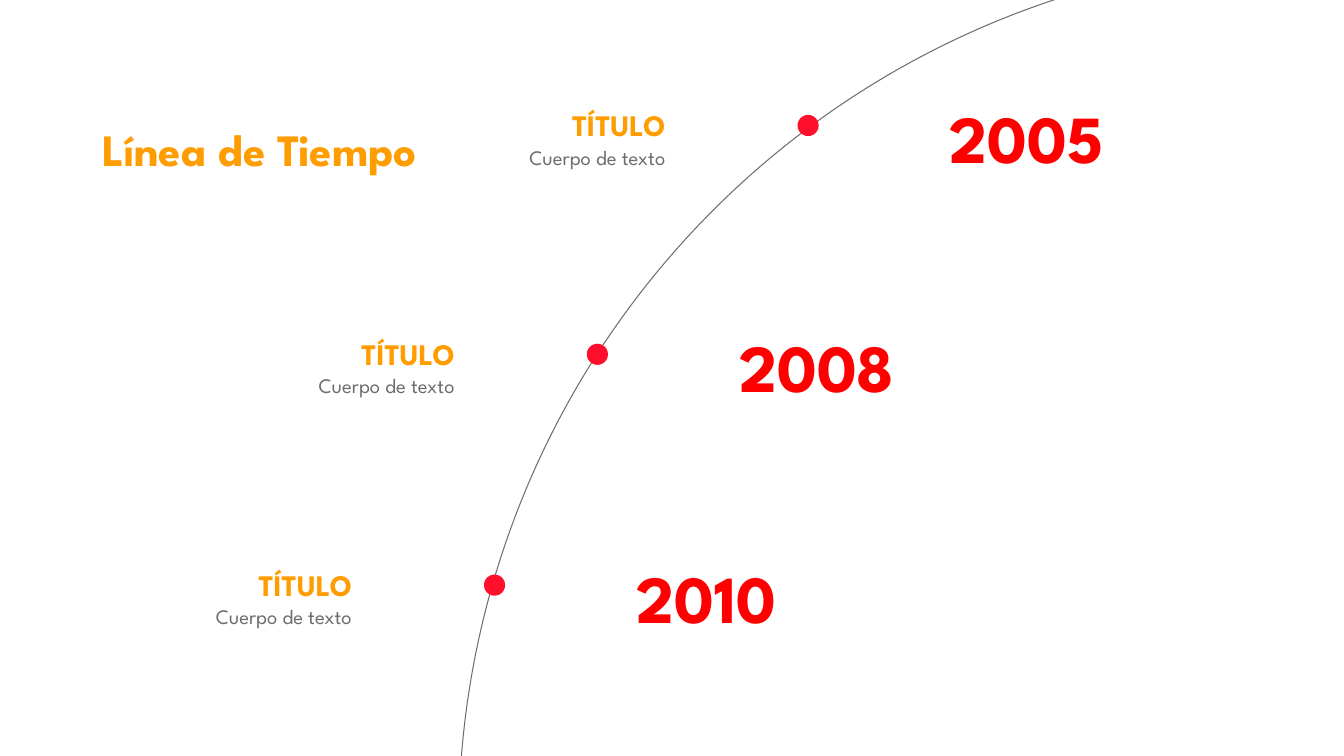
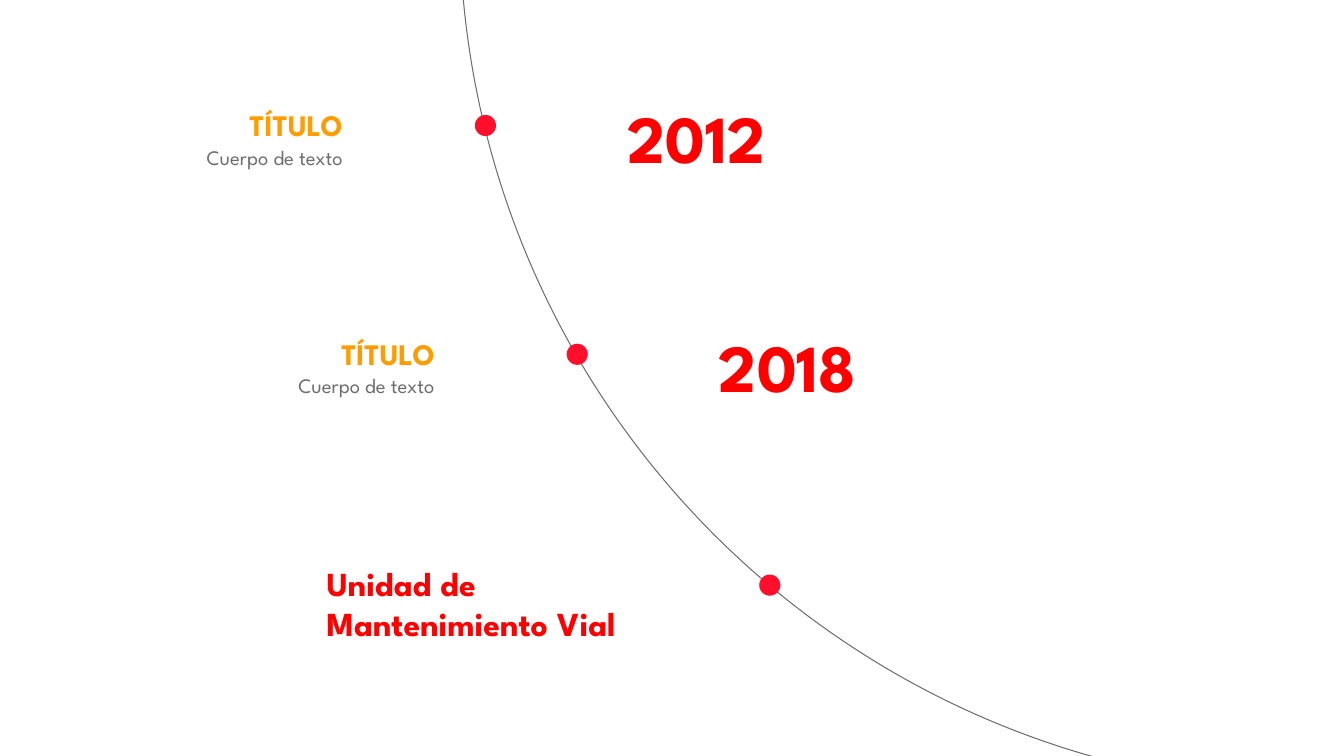
from pptx import Presentation, util as u
from pptx.dml.color import RGBColor
from pptx.enum import shapes, text

PX = u.Inches(1) // 100  # 100 px to the inch
FONT = "League Spartan"
COLORS = {"orange": "FF9D00", "red": "FF0000", "dot": "FF0F2C", "grey": "6E6E6E"}
LEFT, RIGHT = text.PP_ALIGN.LEFT, text.PP_ALIGN.RIGHT
TOP, MIDDLE, BOTTOM = (text.MSO_ANCHOR.TOP, text.MSO_ANCHOR.MIDDLE,
                       text.MSO_ANCHOR.BOTTOM)

# Text styles: color, inset, frame, paragraph and font formats
STYLES = {
    "heading": ("orange", 10, {"vertical_anchor": BOTTOM},
                {"alignment": LEFT, "line_spacing": 0.9},
                {"size": u.Pt(32), "bold": True}),
    "year": ("red", 13, {"vertical_anchor": MIDDLE}, {"alignment": LEFT},
             {"size": u.Pt(48), "bold": True}),
    "unit": ("red", 13, {"vertical_anchor": MIDDLE}, {"alignment": LEFT},
             {"size": u.Pt(24), "bold": True}),
    "title": ("orange", 13, {"vertical_anchor": TOP}, {"alignment": RIGHT},
              {"size": u.Pt(21.3), "bold": True}),
    "body": ("grey", 13, {"vertical_anchor": TOP}, {"alignment": RIGHT},
             {"size": u.Pt(14.7), "bold": False}),
}

# Timeline geometry
CIRCLE, DOT = 1724, 21
ROWS = [114, 341, 570]  # dot tops
LABEL_GAP = 118         # label right edge to dot
YEAR_SHIFT = 138        # dot to year box

PAGES = [
    {"circle": (455, -44),
     "events": [(791, "2005"), (582, "2008"), (480, "2010")],
     "extra": ("Línea de Tiempo", "heading", 92, 40, 338, 145)},
    {"circle": (456, -941),
     "events": [(471, "2012"), (562, "2018"), (753, None)],
     "extra": ("Unidad de Mantenimiento Vial", "unit", 311, 562, 390, 73)},
]


def add_text(page, words, style, left, top, width, height):
    color, inset, frame_format, para_format, font_format = STYLES[style]
    box = page.shapes.add_textbox(left * PX, top * PX, width * PX, height * PX)
    frame = box.text_frame
    frame.word_wrap = True
    for side in ("left", "top", "right", "bottom"):
        setattr(frame, f"margin_{side}", inset * PX)
    para = frame.paragraphs[0]
    span = para.add_run()
    span.text = words
    span.font.name = FONT
    span.font.color.rgb = RGBColor.from_string(COLORS[color])
    for target, values in ((frame, frame_format), (para, para_format),
                           (span.font, font_format)):
        for name, value in values.items():
            setattr(target, name, value)


def add_circle(page, left, top, size):
    circle = page.shapes.add_shape(shapes.MSO_SHAPE.OVAL, left * PX, top * PX,
                                   size * PX, size * PX)
    circle.shadow.inherit = False
    return circle


deck = Presentation()
deck.slide_width, deck.slide_height = 1333 * PX, 750 * PX

for content in PAGES:
    page = deck.slides.add_slide(deck.slide_layouts[6])

    # Arc of the timeline
    arc = add_circle(page, *content["circle"], CIRCLE)
    arc.fill.background()
    arc.line.color.rgb = RGBColor.from_string(COLORS["grey"])
    arc.line.width = u.Pt(0.75)

    # Events along the arc
    for (left, year), top in zip(content["events"], ROWS):
        dot = add_circle(page, left, top, DOT)
        dot.fill.solid()
        dot.fill.fore_color.rgb = RGBColor.from_string(COLORS["dot"])
        dot.line.fill.background()
        if year:
            edge = left - LABEL_GAP
            add_text(page, year, "year", left + YEAR_SHIFT, top - 3, 220, 49)
            add_text(page, "TÍTULO", "title", edge - 172, top - 21, 172, 58)
            add_text(page, "Cuerpo de texto", "body", edge - 278, top + 17, 278, 90)

    # Heading or closing label
    add_text(page, *content["extra"])

deck.save("out.pptx")
